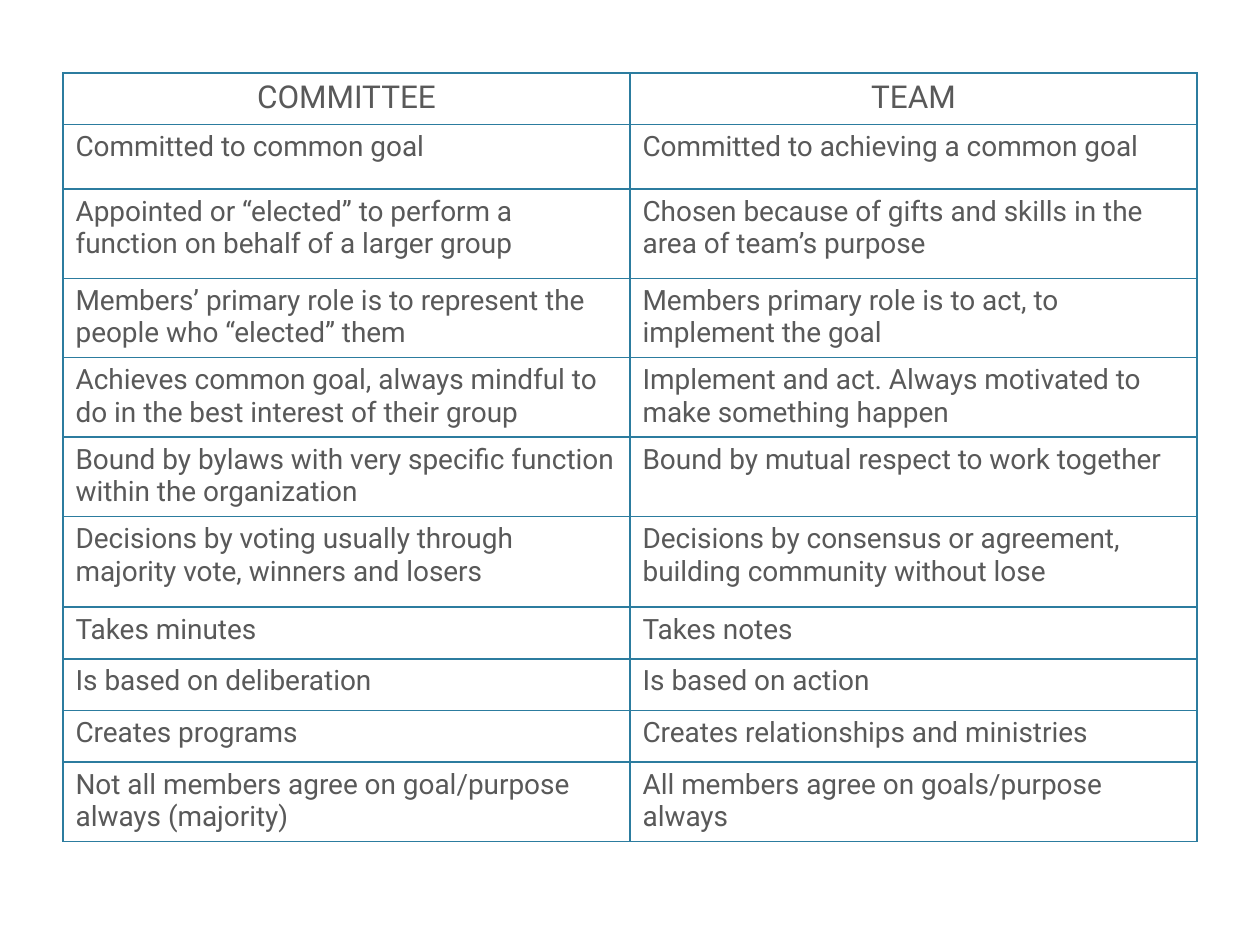
from lxml.etree import SubElement
from pptx import Presentation
from pptx.dml.color import RGBColor
from pptx.enum.text import PP_ALIGN
from pptx.oxml.ns import qn
from pptx.util import Cm, Pt

TEXT_GRAY = RGBColor(0x59, 0x59, 0x59)
BORDER_BLUE = RGBColor(0x2C, 0x7C, 0x9F)
FONT = "Roboto"

SHORT_ROW, TALL_ROW = 1.04, 1.6

# Row height in cm, committee text, team text
ROWS = [
    (SHORT_ROW, "COMMITTEE", "TEAM"),
    (1.3, "Committed to common goal", "Committed to achieving a common goal"),
    (1.8, "Appointed or “elected” to perform a function on behalf of a larger group",
     "Chosen because of gifts and skills in the area of team’s purpose"),
    (TALL_ROW, "Members’ primary role is to represent the people who “elected” them",
     "Members primary role is to act, to implement the goal"),
    (TALL_ROW, "Achieves common goal, always mindful to do in the best interest of their group",
     "Implement and act. Always motivated to make something happen"),
    (TALL_ROW, "Bound by bylaws with very specific function within the organization",
     "Bound by mutual respect to work together"),
    (1.83, "Decisions by voting usually through majority vote, winners and losers",
     "Decisions by consensus or agreement, building community without lose"),
    (SHORT_ROW, "Takes minutes", "Takes notes"),
    (SHORT_ROW, "Is based on deliberation", "Is based on action"),
    (SHORT_ROW, "Creates programs", "Creates relationships and ministries"),
    (TALL_ROW, "Not all members agree on goal/purpose always (majority)",
     "All members agree on goals/purpose always"),
]


def write_text(text_frame, text, size=16, align=PP_ALIGN.LEFT, color=TEXT_GRAY):
    paragraph = text_frame.paragraphs[0]
    paragraph.alignment = align
    run = paragraph.add_run()
    run.text = text
    run.font.name = FONT
    run.font.size = Pt(size)
    run.font.color.rgb = color


class SlideBuilder:
    def __init__(self, slide, border_color=BORDER_BLUE, border_width=1):
        self.slide = slide
        self.border_color = border_color
        self.border_width = border_width

    def add_borders(self, cell):
        properties = cell._tc.get_or_add_tcPr()
        for position, side in enumerate(("a:lnL", "a:lnR", "a:lnT", "a:lnB")):
            line = properties.makeelement(qn(side), {"w": str(Pt(self.border_width))})
            fill = SubElement(line, qn("a:solidFill"))
            SubElement(fill, qn("a:srgbClr"), val=str(self.border_color))
            properties.insert(position, line)

    def add_comparison_table(self, rows, left, top, column_width):
        columns = len(rows[0]) - 1
        height = sum(row[0] for row in rows)
        table = self.slide.shapes.add_table(
            len(rows), columns, Cm(left), Cm(top),
            Cm(column_width * columns), Cm(height)).table
        table.horz_banding = False
        table.first_row = False
        for column in table.columns:
            column.width = Cm(column_width)
        for row_index, (row_height, *texts) in enumerate(rows):
            table.rows[row_index].height = Cm(row_height)
            # The heading row is larger and centred
            style = {"size": 18, "align": PP_ALIGN.CENTER} if row_index == 0 else {}
            for column_index, text in enumerate(texts):
                cell = table.cell(row_index, column_index)
                cell.fill.background()
                self.add_borders(cell)
                write_text(cell.text_frame, text, **style)


def main():
    presentation = Presentation()
    presentation.slide_width = Cm(25.4)
    presentation.slide_height = Cm(19.05)
    slide = presentation.slides.add_slide(presentation.slide_layouts[6])

    # Committee and team side by side
    builder = SlideBuilder(slide)
    builder.add_comparison_table(ROWS, left=1.27, top=1.47, column_width=11.43)

    presentation.save("out.pptx")


if __name__ == "__main__":
    main()
